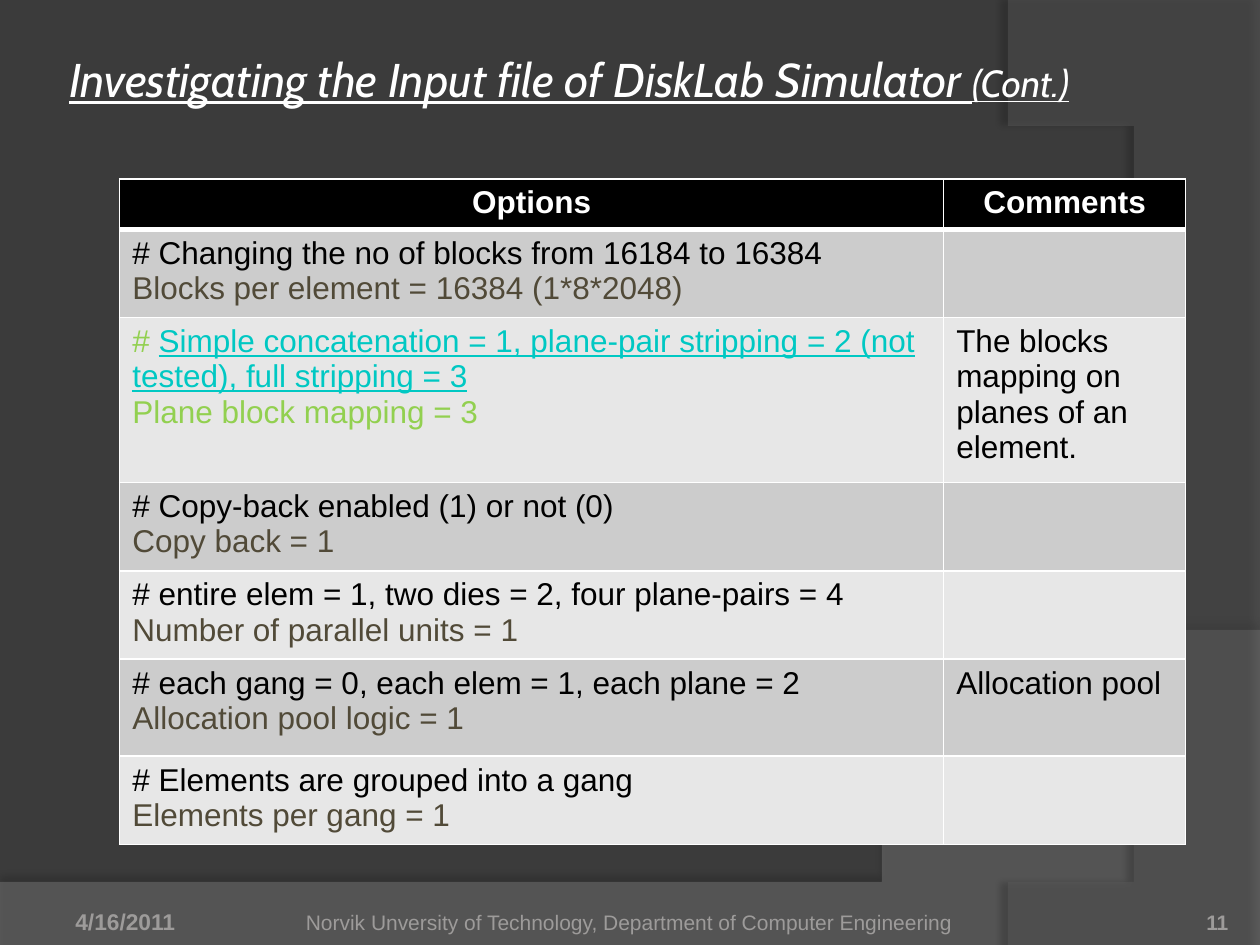
from lxml import etree
from pptx import Presentation
from pptx.dml.color import RGBColor
from pptx.enum.text import MSO_ANCHOR, PP_ALIGN
from pptx.oxml.ns import qn
from pptx.util import Inches, Pt

TOP, MIDDLE, BOTTOM = MSO_ANCHOR.TOP, MSO_ANCHOR.MIDDLE, MSO_ANCHOR.BOTTOM
LEFT, CENTER, RIGHT = PP_ALIGN.LEFT, PP_ALIGN.CENTER, PP_ALIGN.RIGHT

CHARCOAL = RGBColor(0x3B, 0x3B, 0x3B)
LOWER_GRAY = RGBColor(0x7F, 0x7F, 0x7F)
RIGHT_GRAY = RGBColor(0x5E, 0x5E, 0x5E)
FOOTER_GRAY = RGBColor(0x9D, 0x9B, 0x9A)
WHITE = RGBColor(0xFF, 0xFF, 0xFF)
BLACK = RGBColor(0x00, 0x00, 0x00)
BAND_DARK = RGBColor(0xCC, 0xCC, 0xCC)
BAND_LIGHT = RGBColor(0xE7, 0xE7, 0xE7)
BROWN = RGBColor(0x51, 0x4A, 0x38)
GREEN = RGBColor(0x92, 0xD0, 0x50)
TEAL = RGBColor(0x00, 0xC8, 0xC3)


def add_run(paragraph, text, size, color, font="Arial"):
    run = paragraph.add_run()
    run.text = text
    run.font.name = font
    run.font.size = Pt(size)
    run.font.color.rgb = color
    return run


def add_textbox(box, insets, anchor, align):
    """Add an empty wrapping text box and return its first paragraph."""
    frame = slide.shapes.add_textbox(*map(Inches, box)).text_frame
    frame.word_wrap = True
    frame.vertical_anchor = anchor
    (frame.margin_left, frame.margin_top,
     frame.margin_right, frame.margin_bottom) = map(Inches, insets)
    frame.paragraphs[0].alignment = align
    return frame.paragraphs[0]


prs = Presentation()
prs.slide_width, prs.slide_height = Inches(10), Inches(7.5)
slide = prs.slides.add_slide(prs.slide_layouts[6])
slide.background.fill.solid()
slide.background.fill.fore_color.rgb = CHARCOAL

# Background sweeps: straight corners, then a Bezier curve from the last corner.
# Each ends with colour, opacity, shadow opacity, distance (pt) and direction.
sweeps = [
    ([(0, 7.05), (0, 7.5), (10, 7.5), (10, 5.2)],
     [(5.59, 7.29), (3.91, 7.19), (0, 7.05)], LOWER_GRAY, 45, 35, 3.5, 270),
    ([(8, 0), (10, 0.02), (10, 7.5), (8.21, 7.5)],
     [(9.35, 6.19), (10.18, 3), (8, 0)], RIGHT_GRAY, 40, 45, 4, 180),
]
CURVE_STEPS = 40
for corners, bezier, color, opacity, shade, distance, direction in sweeps:
    controls = [corners[-1], *bezier]
    outline = list(corners)
    for step in range(1, CURVE_STEPS + 1):
        t = step / CURVE_STEPS
        weights = ((1 - t) ** 3, 3 * t * (1 - t) ** 2, 3 * t ** 2 * (1 - t), t ** 3)
        outline.append(tuple(sum(w * point[axis] for w, point in zip(weights, controls))
                             for axis in (0, 1)))
    builder = slide.shapes.build_freeform(*outline[0], scale=Inches(1))
    builder.add_line_segments(outline[1:], close=True)
    sweep = builder.convert_to_shape()
    sweep.fill.solid()
    sweep.fill.fore_color.rgb = color
    sweep.line.fill.background()
    sweep.shadow.inherit = False
    properties = sweep.fill._xPr
    fill_color = properties.find(qn("a:solidFill"))[0]
    etree.SubElement(fill_color, qn("a:alpha"), val=str(opacity * 1000))
    shadow = etree.SubElement(
        properties.find(qn("a:effectLst")), qn("a:outerShdw"), blurRad=str(Pt(4)),
        dist=str(Pt(distance)), dir=str(direction * 60000), algn="ctr", rotWithShape="0")
    shadow_color = etree.SubElement(shadow, qn("a:srgbClr"), val="000000")
    etree.SubElement(shadow_color, qn("a:alpha"), val=str(shade * 1000))

# Title
title = add_textbox((0.5, 0.4, 8.83, 0.7), (0.05, 0, 0.05, 0), TOP, LEFT)
for text, size in [("Investigating the Input file of DiskLab Simulator ", 27),
                   ("(Cont.)", 21.6)]:
    run = add_run(title, text, size, WHITE, "Cabin")
    run.font.italic = True
    run.font.underline = True

# Options table: each row is (option lines made of runs, comment)
rows = [
    ([[("Options", WHITE)]], "Comments"),
    ([[("# Changing the no of blocks from 16184 to 16384", BLACK)],
      [("Blocks per element = 16384 (1*8*2048)", BROWN)]], ""),
    ([[("# ", GREEN),
       ("Simple concatenation = 1, plane-pair stripping = 2 (not tested), "
        "full stripping = 3", TEAL)],
      [("Plane block mapping = 3", GREEN)]],
     "The blocks mapping on planes of an element."),
    ([[("# Copy-back enabled (1) or not (0)", BLACK)],
      [("Copy back = 1", BROWN)]], ""),
    ([[("# entire elem = 1, two dies = 2, four plane-pairs = 4", BLACK)],
      [("Number of parallel units = 1", BROWN)]], ""),
    ([[("# each gang = 0, each elem = 1, each plane = 2", BLACK)],
      [("Allocation pool logic = 1", BROWN)]], "Allocation pool"),
    ([[("# Elements are grouped into a gang", BLACK)],
      [("Elements per gang = 1", BROWN)]], ""),
]
row_heights = [0.4, 0.66, 1.31, 0.66, 0.66, 0.77, 0.66]
table = slide.shapes.add_table(
    len(rows), 2, Inches(0.95), Inches(1.42), Inches(8.46), Inches(sum(row_heights))).table
table.columns[0].width, table.columns[1].width = Inches(6.54), Inches(1.92)

for row_index, (option_lines, comment) in enumerate(rows):
    table.rows[row_index].height = Inches(row_heights[row_index])
    is_header = row_index == 0
    band = BLACK if is_header else BAND_DARK if row_index % 2 else BAND_LIGHT
    comment_lines = [[(comment, WHITE if is_header else BLACK)]] if comment else []
    for column, lines in enumerate((option_lines, comment_lines)):
        cell = table.cell(row_index, column)
        cell.fill.solid()
        cell.fill.fore_color.rgb = band
        for line_index, line in enumerate(lines):
            frame = cell.text_frame
            paragraph = frame.add_paragraph() if line_index else frame.paragraphs[0]
            paragraph.alignment = CENTER if is_header else LEFT
            for text, color in line:
                run = add_run(paragraph, text, 18, color)
                run.font.bold = is_header
                run.font.underline = color == TEAL
        cell_properties = cell._tc.get_or_add_tcPr()
        for position, side in enumerate(("lnL", "lnR", "lnT", "lnB")):
            thick = (row_index, side) in ((0, "lnB"), (1, "lnT"))
            border = etree.Element(qn(f"a:{side}"), w=str(Pt(3 if thick else 1)))
            border_fill = etree.SubElement(border, qn("a:solidFill"))
            etree.SubElement(border_fill, qn("a:srgbClr"), val=str(WHITE))
            cell_properties.insert(position, border)

# Footer
footers = [
    ("4/16/2011", 0.5, 2.33, (0.1, 0.05, 0.1, 0), LEFT, 13, True),
    ("11", 8.92, 0.83, (0, 0, 0, 0), RIGHT, 12, True),
    ("Norvik Unversity of Technology, Department of Computer Engineering",
     2.33, 5.33, (0, 0.05, 0, 0), CENTER, 12, False),
]
for text, left, width, insets, align, size, bold in footers:
    paragraph = add_textbox((left, 7.02, width, 0.4), insets, BOTTOM, align)
    add_run(paragraph, text, size, FOOTER_GRAY).font.bold = bold

prs.save("out.pptx")
